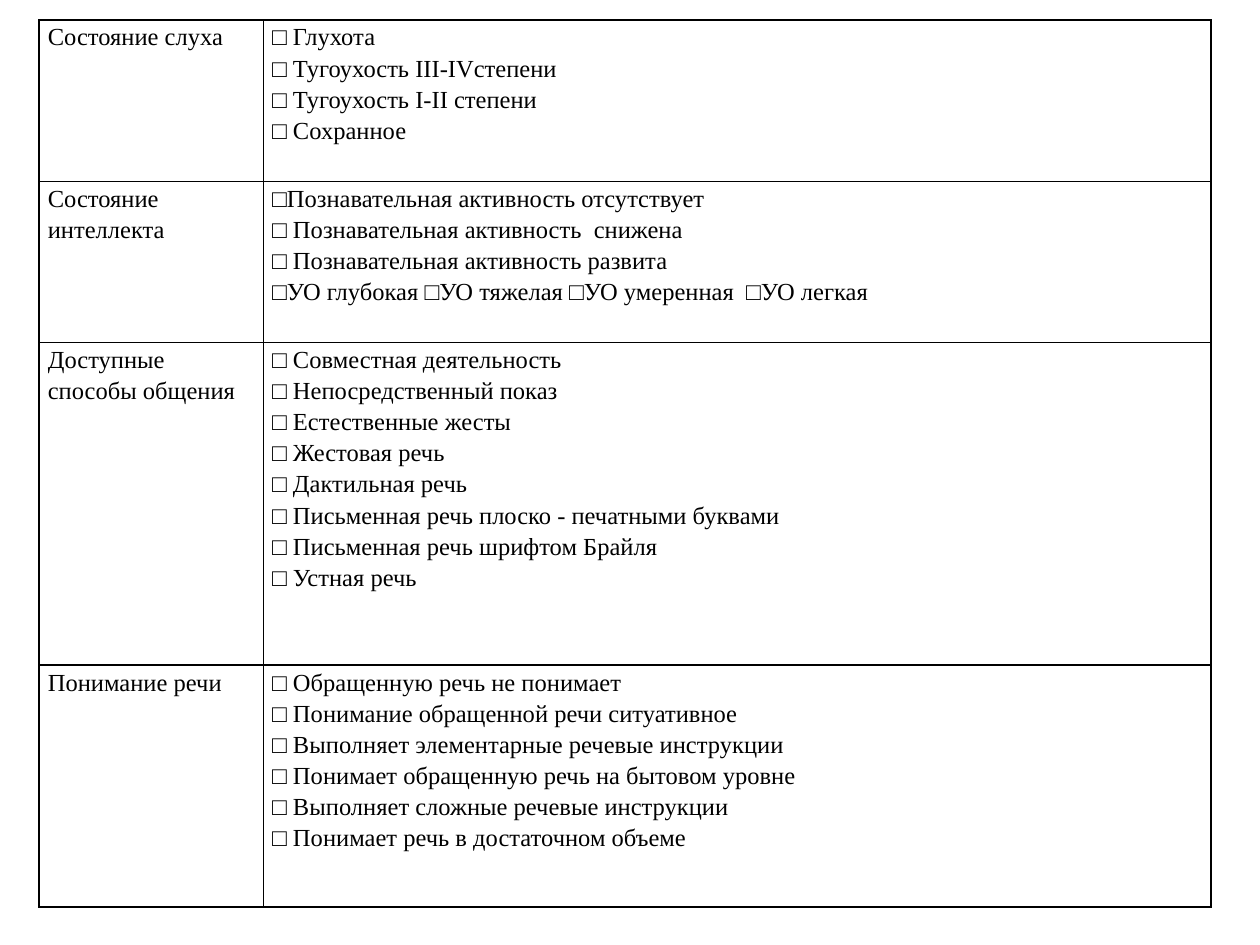
from lxml.etree import SubElement
from pptx import Presentation
from pptx.dml.color import RGBColor as RGB
from pptx.oxml.ns import qn
from pptx.util import Inches, Pt

THEME = {"font": "Times New Roman", "size": 14, "text": "000000",
         "border": "000000", "border_width": 1, "spacing": 1.15}

SECTIONS = [
    ("Состояние слуха", 2, [
        "□ Глухота",
        "□ Тугоухость III-IVстепени",
        "□ Тугоухость I-II степени",
        "□ Сохранное",
    ]),
    ("Состояние интеллекта", 2, [
        "□Познавательная активность отсутствует",
        "□ Познавательная активность  снижена",
        "□ Познавательная активность развита",
        "□УО глубокая □УО тяжелая □УО умеренная  □УО легкая",
    ]),
    ("Доступные способы общения", 4, [
        "□ Совместная деятельность",
        "□ Непосредственный показ",
        "□ Естественные жесты",
        "□ Жестовая речь",
        "□ Дактильная речь",
        "□ Письменная речь плоско - печатными буквами",
        "□ Письменная речь шрифтом Брайля",
        "□ Устная речь",
    ]),
    ("Понимание речи", 3, [
        "□ Обращенную речь не понимает",
        "□ Понимание обращенной речи ситуативное",
        "□ Выполняет элементарные речевые инструкции",
        "□ Понимает обращенную речь на бытовом уровне",
        "□ Выполняет сложные речевые инструкции",
        "□ Понимает речь в достаточном объеме",
    ]),
]
LEFT, TOP = 0.31, 0.16
COLUMNS = [1.78, 7.52]
ROW_UNIT = 0.64


def write(tf, lines, size=THEME["size"], color=THEME["text"], font=THEME["font"]):
    for i, line in enumerate(lines):
        p = tf.add_paragraph() if i else tf.paragraphs[0]
        p.line_spacing = THEME["spacing"]
        r = p.add_run()
        r.text = line
        r.font.name = font
        r.font.size = Pt(size)
        r.font.color.rgb = RGB.from_string(color)


def add_borders(cell):
    tcPr = cell._tc.get_or_add_tcPr()
    for side in ("lnL", "lnR", "lnT", "lnB"):
        ln = SubElement(tcPr, qn(f"a:{side}"), w=str(Pt(THEME["border_width"])))
        fill = SubElement(ln, qn("a:solidFill"))
        SubElement(fill, qn("a:srgbClr"), val=THEME["border"])


def fill_cell(cell, lines):
    cell.margin_left = cell.margin_right = Inches(0.07)
    cell.margin_top = cell.margin_bottom = 0
    add_borders(cell)
    cell.fill.background()
    write(cell.text_frame, lines)


def main():
    prs = Presentation()
    prs.slide_width, prs.slide_height = Inches(10), Inches(7.5)
    s = prs.slides.add_slide(prs.slide_layouts[6])
    height = ROW_UNIT * sum(units for _, units, _ in SECTIONS)
    table = s.shapes.add_table(len(SECTIONS), len(COLUMNS), Inches(LEFT), Inches(TOP),
                               Inches(sum(COLUMNS)), Inches(height)).table
    table.first_row = table.horz_banding = False
    for column, width in zip(table.columns, COLUMNS):
        column.width = Inches(width)
    for i, (heading, units, options) in enumerate(SECTIONS):
        table.rows[i].height = Inches(ROW_UNIT * units)
        fill_cell(table.cell(i, 0), [heading])
        fill_cell(table.cell(i, 1), options)
    prs.save("out.pptx")


if __name__ == "__main__":
    main()
